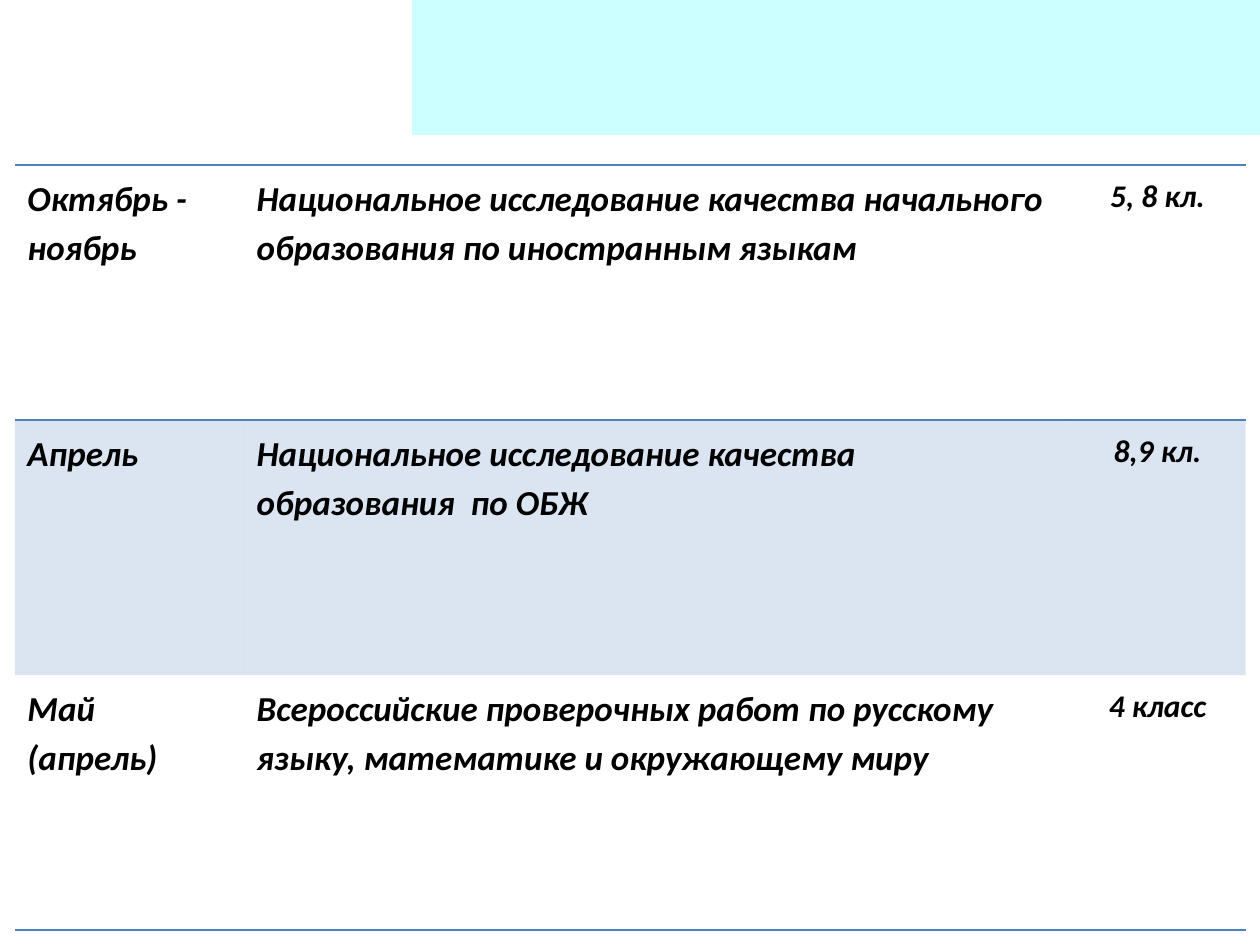
from dataclasses import dataclass

import pptx
import pptx.dml.color
import pptx.enum.shapes
import pptx.enum.text
import pptx.oxml
import pptx.oxml.ns
import pptx.util
from pptx.dml.color import RGBColor
from pptx.util import Cm

BLACK = RGBColor(0x00, 0x00, 0x00)
BLUE = RGBColor(0x4F, 0x81, 0xBD)
PALE_CYAN = RGBColor(0xCC, 0xFF, 0xFF)

PAGE_WIDTH, PAGE_HEIGHT = Cm(25.4), Cm(19.05)
BANNER_LEFT, BANNER_HEIGHT = Cm(8.31), Cm(2.72)
TABLE_LEFT, TABLE_TOP = Cm(0.3), Cm(3.33)
COLUMN_WIDTHS = (Cm(4.62), Cm(16.64), Cm(3.55))
ROW_HEIGHT = Cm(5.14)
PLAIN_TABLE_STYLE = "{2D5ABB26-0587-4C30-8999-92F81FD0307C}"


@dataclass(frozen=True)
class Assessment:
    period: str
    title: str
    grades: str
    borders: tuple[str, ...] = ()
    shaded: bool = False


ASSESSMENTS = (
    Assessment(
        "Октябрь - ноябрь",
        "Национальное исследование качества начального образования по иностранным языкам",
        "5, 8 кл.",
        borders=("lnT", "lnB"),
    ),
    Assessment(
        "Апрель",
        "Национальное исследование качества образования  по ОБЖ",
        "8,9 кл.",
        shaded=True,
    ),
    Assessment(
        "Май (апрель)",
        "Всероссийские проверочных работ по русскому языку, математике и окружающему миру",
        "4 класс",
        borders=("lnB",),
    ),
)


def add_banner(page) -> None:
    banner = page.shapes.add_shape(
        pptx.enum.shapes.MSO_SHAPE.RECTANGLE,
        BANNER_LEFT, 0, PAGE_WIDTH - BANNER_LEFT, BANNER_HEIGHT,
    )
    banner.shadow.inherit = False
    banner.fill.solid()
    banner.fill.fore_color.rgb = PALE_CYAN
    banner.line.fill.background()


def add_border(cell, side: str) -> None:
    """Draw one edge; call before filling, as lines precede fills in the XML."""
    cell._tc.get_or_add_tcPr().append(pptx.oxml.parse_xml(
        f'<a:{side} {pptx.oxml.ns.nsdecls("a")} w="12700"><a:solidFill>'
        f'<a:srgbClr val="{BLUE}"/></a:solidFill></a:{side}>'
    ))


def shade(cell) -> None:
    """Fill with blue at 20 % opacity."""
    cell.fill.solid()
    cell.fill.fore_color.rgb = BLUE
    color = cell._tc.tcPr.find(".//" + pptx.oxml.ns.qn("a:solidFill") + "/"
                               + pptx.oxml.ns.qn("a:srgbClr")) 
    color.append(pptx.oxml.parse_xml(
        f'<a:alpha {pptx.oxml.ns.nsdecls("a")} val="20000"/>'
    ))


def write(cell, text: str, size: int, centered: bool) -> None:
    para = cell.text_frame.paragraphs[0]
    para.line_spacing = 1.15
    if centered:
        para.alignment = pptx.enum.text.PP_ALIGN.CENTER
    span = para.add_run()
    span.text = text
    span.font.name = "Calibri"
    span.font.size = pptx.util.Pt(size)
    span.font.bold = span.font.italic = True
    span.font.color.rgb = BLACK


def add_schedule(page, assessments: tuple[Assessment, ...]) -> None:
    frame = page.shapes.add_table(
        len(assessments), len(COLUMN_WIDTHS), TABLE_LEFT, TABLE_TOP,
        sum(COLUMN_WIDTHS), ROW_HEIGHT * len(assessments),
    )
    table = frame.table
    table.first_row = table.horz_banding = False
    style = table._tbl.tblPr.find(pptx.oxml.ns.qn("a:tableStyleId"))
    style.text = PLAIN_TABLE_STYLE
    for column, width in zip(table.columns, COLUMN_WIDTHS):
        column.width = width
    for row, assessment in zip(table.rows, assessments):
        row.height = ROW_HEIGHT
        texts = (assessment.period, assessment.title, assessment.grades)
        for cell, text in zip(row.cells, texts):
            for side in assessment.borders:
                add_border(cell, side)
            if assessment.shaded:
                shade(cell)
            else:
                cell.fill.background()
            is_grades = text == assessment.grades
            write(cell, text, 18 if is_grades else 20, centered=is_grades)


def main() -> None:
    deck = pptx.Presentation()
    deck.slide_width, deck.slide_height = PAGE_WIDTH, PAGE_HEIGHT
    blank_layout = deck.slide_layouts[6]
    page = deck.slides.add_slide(blank_layout)
    add_banner(page)
    add_schedule(page, ASSESSMENTS)
    deck.save("out.pptx")


if __name__ == "__main__":
    main()
